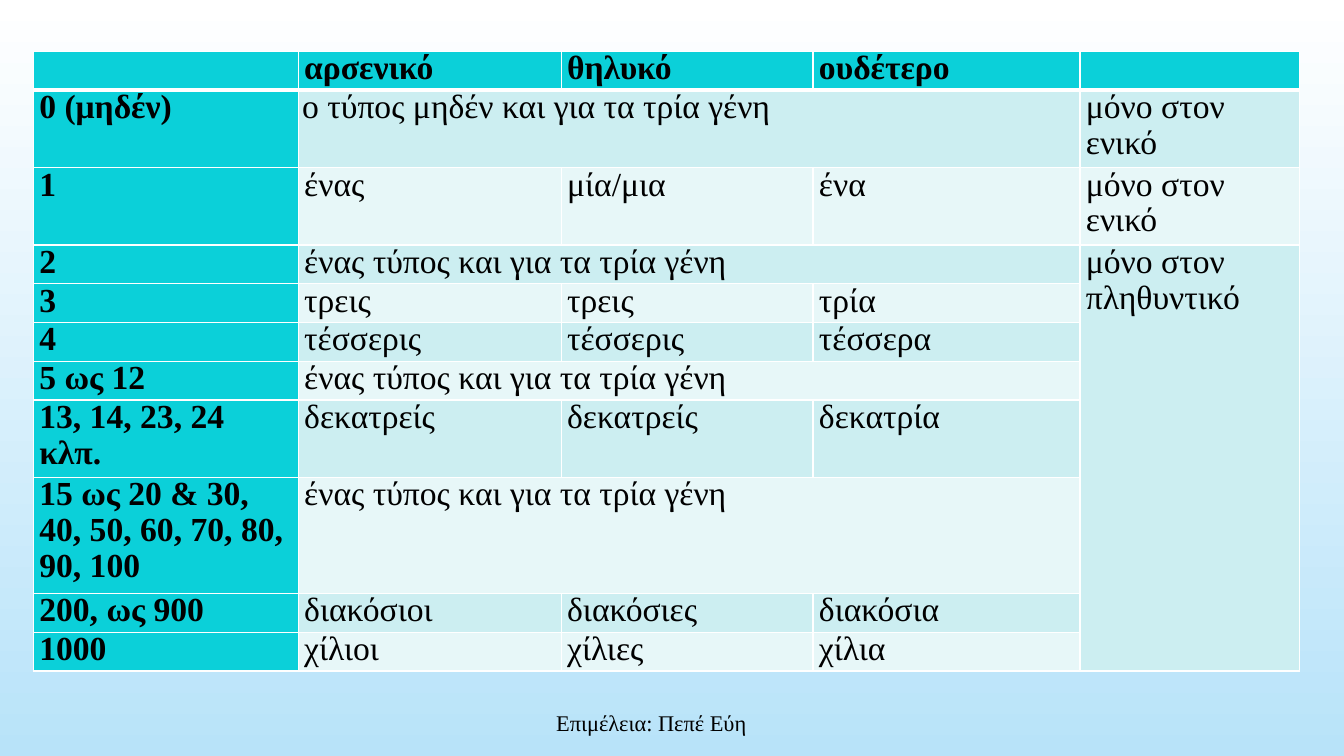
from lxml import etree
from pptx import Presentation
from pptx.dml.color import RGBColor
from pptx.enum.text import MSO_ANCHOR, PP_ALIGN
from pptx.oxml.ns import qn
from pptx.util import Inches, Pt

CENTER = PP_ALIGN.CENTER
MIDDLE = MSO_ANCHOR.MIDDLE
FONT = "Times New Roman"
COLORS = {
    "white": "FFFFFF",
    "sky": "B8E3F9",
    "turquoise": "0BD0D9",
    "odd_band": "CCEEF1",
    "even_band": "E7F7F8",
    "text": "000000",
}
COLUMN_WIDTHS = (2.63, 2.61, 2.5, 2.65, 2.18)
LINE_HEIGHT = 0.37
ONE_FORM = "ένας τύπος και για τα τρία γένη"
SINGULAR = "μόνο στον ενικό"
PLURAL = "μόνο στον πληθυντικό"
PLURAL_START = 3
NUMERALS = [
    (1, "", ["αρσενικό", "θηλυκό", "ουδέτερο"], ""),
    (2, "0 (μηδέν)", ["ο τύπος μηδέν και για τα τρία γένη"], SINGULAR),
    (2, "1", ["ένας", "μία/μια", "ένα"], SINGULAR),
    (1, "2", [ONE_FORM], PLURAL),
    (1, "3", ["τρεις", "τρεις", "τρία"], ""),
    (1, "4", ["τέσσερις", "τέσσερις", "τέσσερα"], ""),
    (1, "5 ως 12", [ONE_FORM], ""),
    (2, "13, 14, 23, 24 κλπ.", ["δεκατρείς", "δεκατρείς", "δεκατρία"], ""),
    (3, "15 ως 20 & 30, 40, 50, 60, 70, 80, 90, 100", [ONE_FORM], ""),
    (1, "200, ως 900", ["διακόσιοι", "διακόσιες", "διακόσια"], ""),
    (1, "1000", ["χίλιοι", "χίλιες", "χίλια"], ""),
]


def color(name):
    """Return a named colour."""
    return RGBColor.from_string(COLORS[name])


def style_text(para, size, bold=False):
    """Format the runs of a paragraph."""
    for span in para.runs:
        span.font.name = FONT
        span.font.size = Pt(size)
        span.font.bold = bold
        span.font.color.rgb = color("text")


def add_borders(cell, top, bottom):
    """Draw white borders, one point wide at the sides."""
    properties = cell._tc.get_or_add_tcPr()
    for side, width in (("L", 1), ("R", 1), ("T", top), ("B", bottom)):
        line = etree.SubElement(properties, qn(f"a:ln{side}"), w=str(Pt(width)))
        fill = etree.SubElement(line, qn("a:solidFill"))
        etree.SubElement(fill, qn("a:srgbClr"), val=COLORS["white"])


def style_cell(cell, row, column):
    """Give a cell its borders, band colour, insets and text format."""
    header = row == 0
    add_borders(cell, 3 if row == 1 else 1, 3 if header else 1)
    band = "odd_band" if row % 2 else "even_band"
    cell.fill.solid()
    cell.fill.fore_color.rgb = color("turquoise" if header or column == 0 else band)
    cell.margin_left = cell.margin_right = Inches(0.04)
    cell.margin_top = cell.margin_bottom = 0
    para = cell.text_frame.paragraphs[0]
    if (row, column) != (1, 1):
        para._p.get_or_add_pPr().set("marL", str(Inches(0.02)))
    para.line_spacing = 0.96
    style_text(para, 24, header or column == 0)


def add_numeral_table(page, left, top, width):
    """Build the table of numerals and their genders."""
    line_count = sum(lines for lines, *_ in NUMERALS)
    frame = page.shapes.add_table(
        len(NUMERALS), len(COLUMN_WIDTHS), Inches(left), Inches(top),
        Inches(width), Inches(line_count * LINE_HEIGHT))
    table = frame.table
    for column, column_width in zip(table.columns, COLUMN_WIDTHS):
        column.width = Inches(column_width * width / sum(COLUMN_WIDTHS))
    for row, (lines, label, forms, note) in enumerate(NUMERALS):
        table.rows[row].height = Inches(lines * LINE_HEIGHT)
        table.cell(row, 0).text = label
        for column, form in enumerate(forms, 1):
            table.cell(row, column).text = form
        table.cell(row, 4).text = note
        for column in range(len(COLUMN_WIDTHS)):
            style_cell(table.cell(row, column), row, column)
        if len(forms) == 1:
            table.cell(row, 1).merge(table.cell(row, 3))
    table.cell(PLURAL_START, 4).merge(table.cell(len(NUMERALS) - 1, 4))


def add_credit(page, left, top, width, height):
    """Place the centred editor credit."""
    box = page.shapes.add_textbox(
        Inches(left), Inches(top), Inches(width), Inches(height))
    frame = box.text_frame
    frame.word_wrap = True
    frame.vertical_anchor = MIDDLE
    frame.text = "Επιμέλεια: Πεπέ Εύη"
    para = frame.paragraphs[0]
    para.alignment = CENTER
    style_text(para, 16)


def paint_background(page):
    """Fade the page from white down to sky blue."""
    fill = page.background.fill
    fill.gradient()
    fill.gradient_angle = 270
    for stop, position, name in zip(fill.gradient_stops, (0, 1), ("white", "sky")):
        stop.position = position
        stop.color.rgb = color(name)


def main():
    """Build and save the deck."""
    deck = Presentation()
    deck.slide_width = Inches(13.33)
    deck.slide_height = Inches(7.5)
    page = deck.slides.add_slide(deck.slide_layouts[6])
    paint_background(page)
    add_credit(page, 2.81, 6.97, 7.3, 0.4)
    add_numeral_table(page, 0.33, 0.51, 12.56)
    deck.save("out.pptx")


if __name__ == "__main__":
    main()
